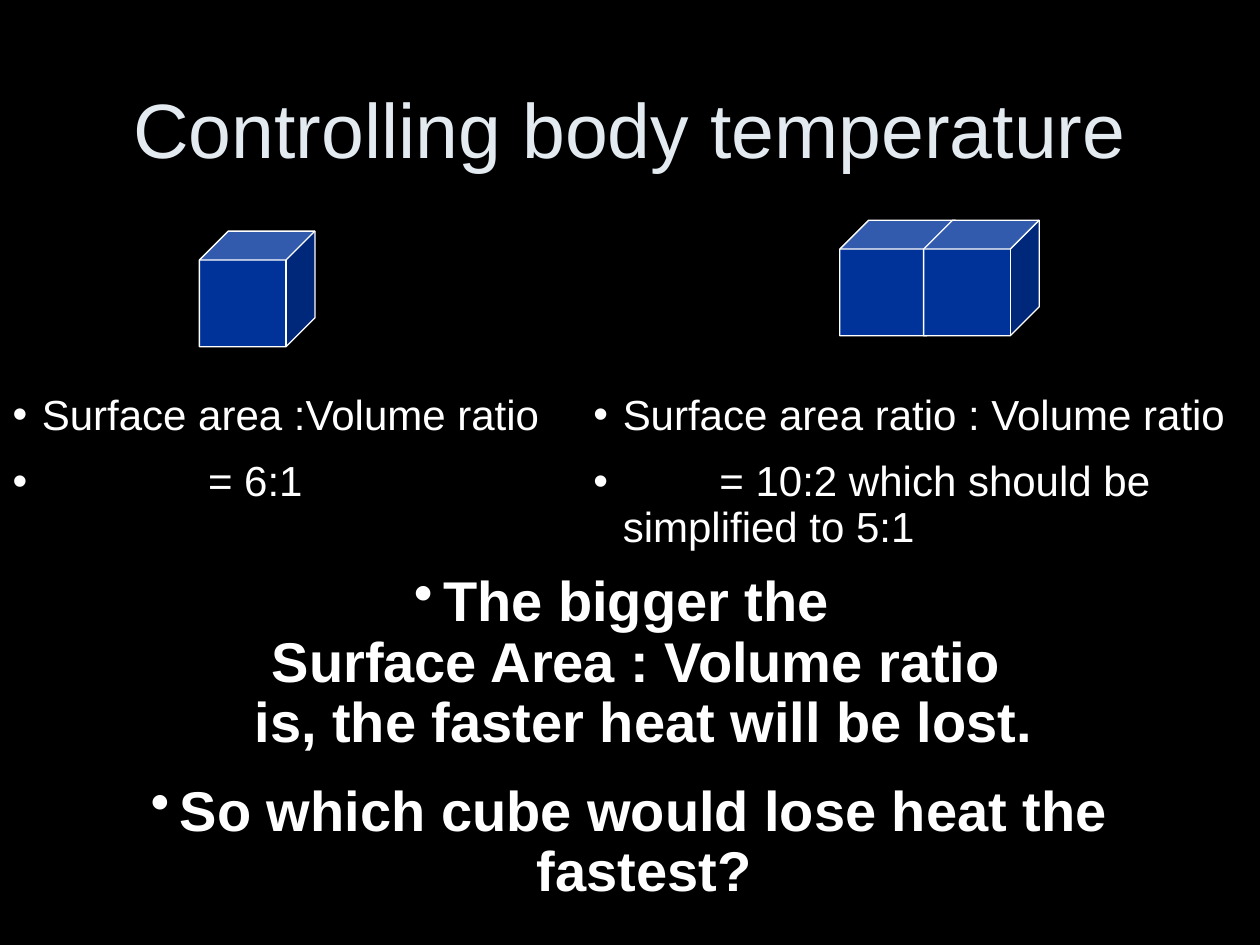
from lxml import etree
from pptx import Presentation
from pptx import util as u
from pptx.dml.color import RGBColor
from pptx.enum import shapes, text
from pptx.oxml.ns import qn

COLORS = {"back": "000000", "title": "E3EBF1", "text": "FFFFFF", "cube": "003399"}
FONT = "Arial"
HANG = 0.59  # usual bullet indent, cm

# Content: positions and sizes in cm
TITLE = "Controlling body temperature"
TITLE_AT = (1.27, 0.99, 22.86, 3.18)
CUBE_SIZE = 2.33
CUBES = [(4.02, 4.66), (16.93, 4.44), (18.62, 4.44)]

# Lists: each item is its wording and its hanging indent
RATIOS = [
    ((0, 7.82, 11.3, 2.82),
     [("Surface area :Volume ratio", HANG), ("= 6:1", 3.94)]),
    ((11.71, 7.82, 13.69, 3.84),
     [("Surface area ratio : Volume ratio", HANG),
      ("\t\t= 10:2 which should be simplified to 5:1", HANG)]),
]
CONCLUSION_AT = (2.11, 11.43, 21.16, 7.09)
CONCLUSION = [
    ("The bigger the \vSurface Area : Volume ratio \vis, the faster heat will be lost.", HANG),
    ("So which cube would lose heat the fastest?", HANG),
]


def color(name):
    return RGBColor.from_string(COLORS[name])


def place(shape, at):
    shape.left, shape.top, shape.width, shape.height = map(u.Cm, at)


def style(para, size, color_name, bold=False):
    para.font.name = FONT
    para.font.size = u.Pt(size)
    para.font.bold = bold
    para.font.color.rgb = color(color_name)


def add_bullet(para, indent):
    props = para._p.get_or_add_pPr()
    props.set("marL", str(u.Cm(indent)))
    props.set("indent", str(-u.Cm(indent)))
    bullet = etree.Element(qn("a:buChar"), char="•")
    props.insert_element_before(bullet, "a:tabLst", "a:defRPr", "a:extLst")


def fill_list(box, at, items, size, align, bold=False):
    place(box, at)
    frame = box.text_frame
    frame.word_wrap = True
    frame.auto_size = text.MSO_AUTO_SIZE.SHAPE_TO_FIT_TEXT
    for number, (wording, indent) in enumerate(items):
        para = frame.add_paragraph() if number else frame.paragraphs[0]
        para.text = wording
        para.alignment = align
        para.line_spacing = 0.9
        para.space_before = u.Pt(size / 2)
        style(para, size, "text", bold)
        add_bullet(para, indent)


def add_cube(page, left, top):
    cube = page.shapes.add_shape(
        shapes.MSO_SHAPE.CUBE, *map(u.Cm, (left, top, CUBE_SIZE, CUBE_SIZE)))
    cube.shadow.inherit = False
    cube.fill.solid()
    cube.fill.fore_color.rgb = color("cube")
    cube.line.color.rgb = color("text")
    cube.line.width = u.Pt(0.75)


def main():
    deck = Presentation()
    deck.slide_width, deck.slide_height = u.Cm(25.4), u.Cm(19.05)
    page = deck.slides.add_slide(deck.slide_layouts.get_by_name("Two Content"))
    page.background.fill.solid()
    page.background.fill.fore_color.rgb = color("back")

    # Title
    title = page.shapes.title
    place(title, TITLE_AT)
    title.text_frame.text = TITLE
    title.text_frame.vertical_anchor = text.MSO_ANCHOR.MIDDLE
    title.text_frame.paragraphs[0].alignment = text.PP_ALIGN.CENTER
    style(title.text_frame.paragraphs[0], 44, "title")

    # One cube on the left, two joined cubes on the right
    for left, top in CUBES:
        add_cube(page, left, top)

    # Ratio under each group of cubes
    for number, (at, items) in enumerate(RATIOS, start=1):
        fill_list(page.placeholders[number], at, items, 24, text.PP_ALIGN.LEFT)

    # Conclusion and question
    box = page.shapes.add_textbox(*map(u.Cm, CONCLUSION_AT))
    fill_list(box, CONCLUSION_AT, CONCLUSION, 32, text.PP_ALIGN.CENTER, bold=True)

    deck.save("out.pptx")


if __name__ == "__main__":
    main()
